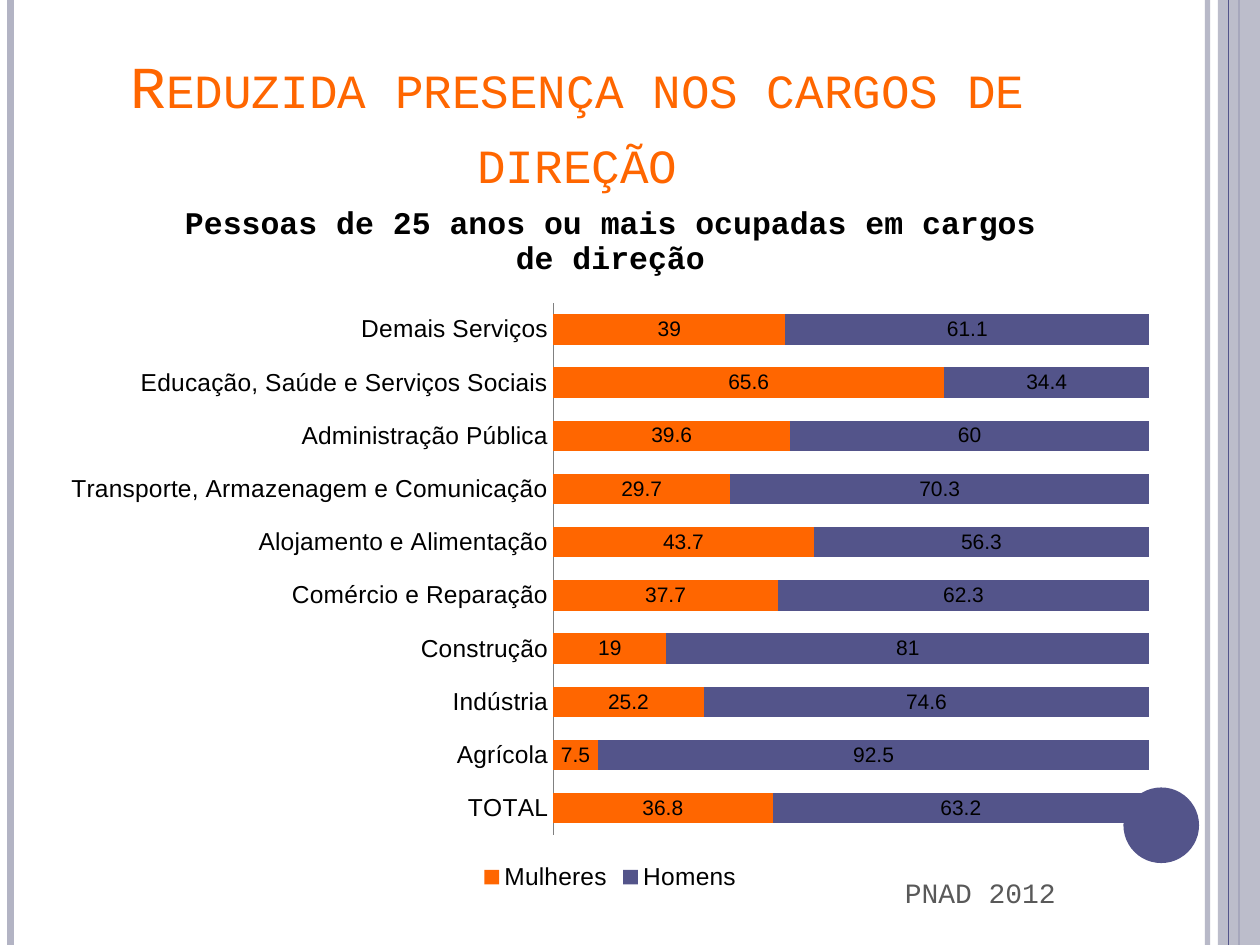
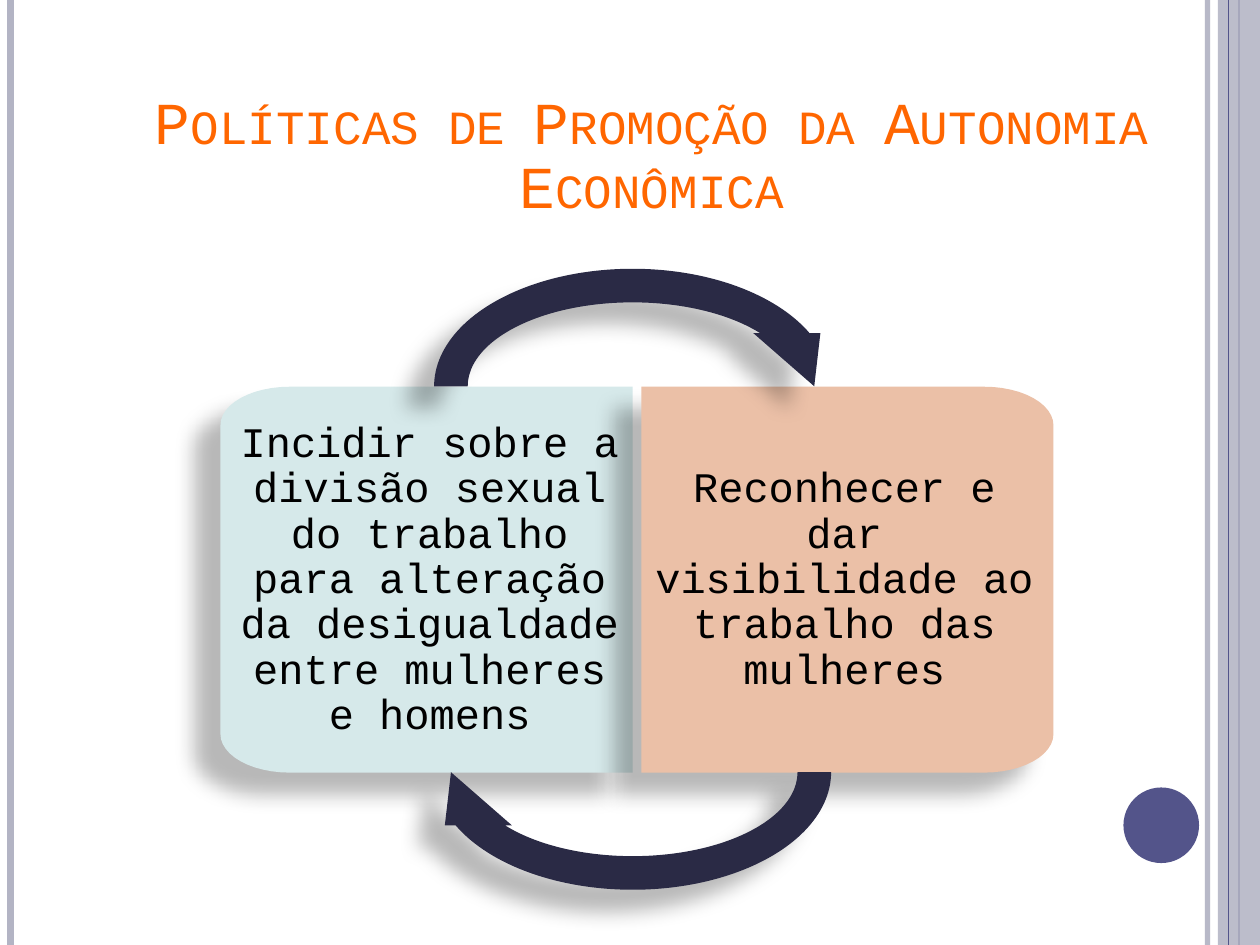
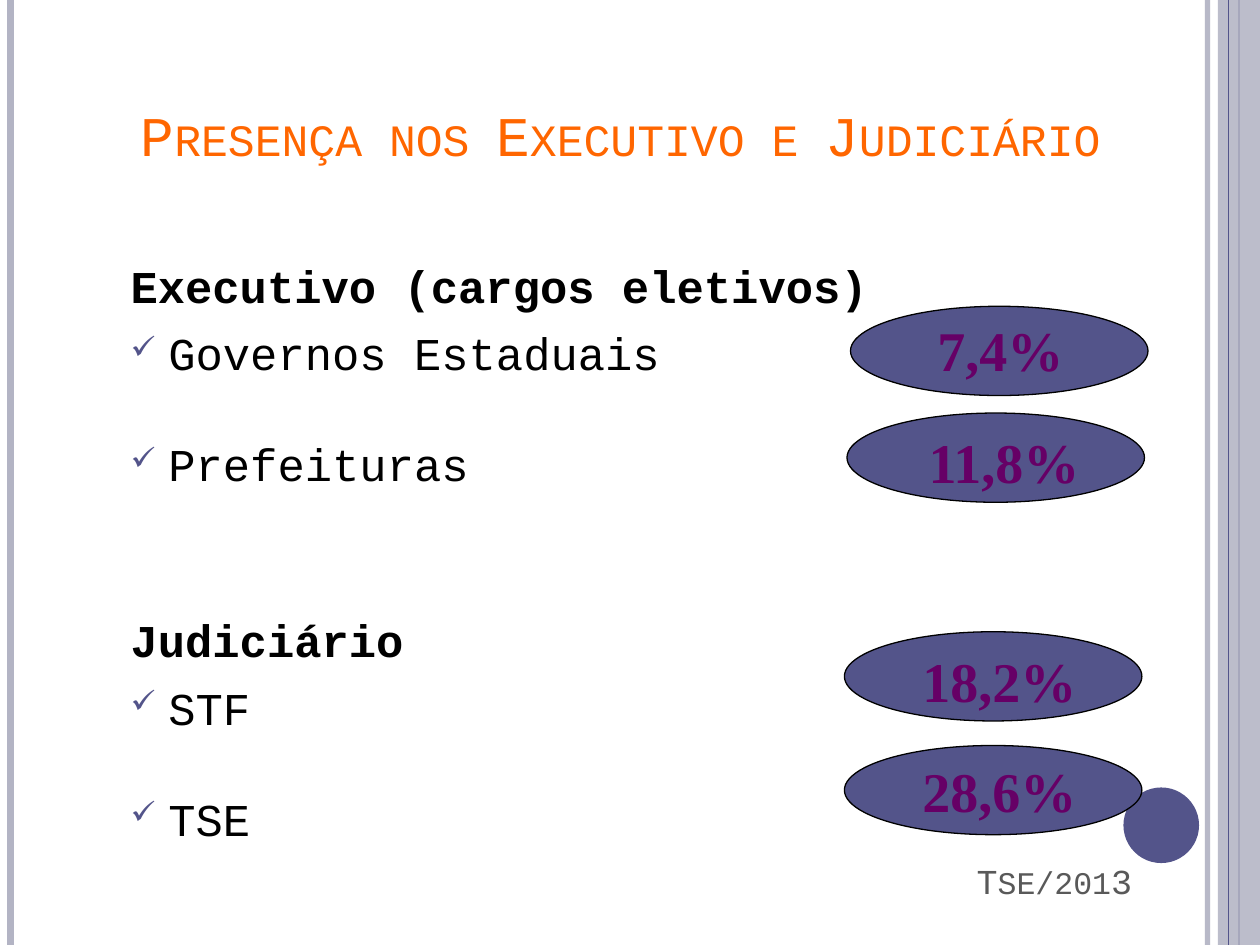
"""Build three slides on women in leadership, with a shared frame."""
from math import cos, pi, sin

from lxml.etree import SubElement
from pptx import Presentation
from pptx.chart.data import CategoryChartData
from pptx.dml.color import RGBColor
from pptx.enum.chart import XL_CHART_TYPE, XL_LEGEND_POSITION, XL_TICK_MARK
from pptx.enum.shapes import MSO_CONNECTOR, MSO_SHAPE
from pptx.enum.text import MSO_ANCHOR, PP_ALIGN
from pptx.oxml.ns import qn
from pptx.util import Pt

HUES = {
    "orange": "FF6600", "indigo": "53548A", "band": "B3B4C4",
    "black": "000000", "grey": "595959", "purple": "660066",
    "mint": "D6E9EA", "peach": "EBC0A7", "navy": "2A2A45", "axis": "808080",
}
MONO, SANS, SERIF = "Courier New", "Arial", "Times New Roman"
WIDE, HIGH = 720, 540

RULES = [(690, "band", 3), (6, "band", 4.5), (708, "indigo", 1.5), (702, "indigo", 0.75)]

SHARES = [
    ("TOTAL", 36.8, 63.2),
    ("Agrícola", 7.5, 92.5),
    ("Indústria", 25.2, 74.6),
    ("Construção", 19, 81),
    ("Comércio e Reparação", 37.7, 62.3),
    ("Alojamento e Alimentação", 43.7, 56.3),
    ("Transporte, Armazenagem e Comunicação", 29.7, 70.3),
    ("Administração Pública", 39.6, 60),
    ("Educação, Saúde e Serviços Sociais", 65.6, 34.4),
    ("Demais Serviços", 39, 61.1),
]
SEXES = [("Mulheres", "orange"), ("Homens", "indigo")]

PANELS = [
    ("Incidir sobre a divisão sexual do trabalho para alteração da "
     "desigualdade entre mulheres e homens", "mint", 126, -1),
    ("Reconhecer e dar visibilidade ao trabalho das mulheres", "peach", 366.5, 1),
]
ARROWS = [(144, 0), (364.5, 180)]
BENDS = [0.125, 11.423, 204.577, 108, 0.125]

POSTS = [
    ("Executivo (cargos eletivos)", True, 6),
    ("Governos Estaduais", False, 6),
    ("Prefeituras", False, 37),
    ("Judiciário", True, 74),
    ("STF", False, 6),
    ("TSE", False, 37),
]
RATES = [
    ("7,4%", 486, 175, 528.5, 177, 87),
    ("11,8%", 484, 236, 523.5, 241, 101.5),
    ("18,2%", 482.5, 361, 520, 366, 105),
    ("28,6%", 482.5, 426, 520, 428.5, 105),
]
CREDIT = [("T", 20), ("SE/201", 18), ("3", 20)]


def rgb(hue):
    return RGBColor.from_string(HUES[hue])


def style(font, face, size, hue="black", bold=False):
    font.name, font.size, font.bold = face, Pt(size), bold
    font.color.rgb = rgb(hue)


def paint(shape, hue, edge=None):
    shape.shadow.inherit = False
    shape.fill.solid()
    shape.fill.fore_color.rgb = rgb(hue)
    if edge:
        shape.line.color.rgb = rgb(edge)
        shape.line.width = Pt(0.75)
    else:
        shape.line.fill.background()


def fade(shape, share):
    tint = next(shape.element.spPr.iter(qn("a:srgbClr")))
    SubElement(tint, qn("a:alpha"), val=str(share * 1000))


def shade(shape):
    glow = SubElement(shape.element.spPr.find(qn("a:effectLst")), qn("a:outerShdw"),
                      blurRad=str(Pt(11.8)), dist=str(Pt(19.7)),
                      dir=str(141 * 60000), algn="ctr", rotWithShape="0")
    tint = SubElement(glow, qn("a:srgbClr"), val=HUES["black"])
    SubElement(tint, qn("a:alpha"), val="28000")


def add(slide, kind, *box):
    return slide.shapes.add_shape(kind, *map(Pt, box))


def write(slide, text, box, face, size, hue, bold=False, wrap=True):
    frame = slide.shapes.add_textbox(*map(Pt, box)).text_frame
    frame.word_wrap = wrap
    para = frame.paragraphs[0]
    para.text = text
    style(para.font, face, size, hue, bold)
    return frame


def title(slide, text, box, size=34, space=1.0, anchor=MSO_ANCHOR.MIDDLE):
    frame = write(slide, text, box, MONO, size, "orange")
    frame.vertical_anchor = anchor
    para = frame.paragraphs[0]
    para.alignment, para.line_spacing = PP_ALIGN.CENTER, space
    para._p.pPr.find(qn("a:defRPr")).set("cap", "small")
    return frame


def dress(layout, slide):
    parts = []
    for left, hue, width in RULES:
        rule = slide.shapes.add_connector(
            MSO_CONNECTOR.STRAIGHT, Pt(left), 0, Pt(left), Pt(HIGH))
        rule.line.color.rgb = rgb(hue)
        rule.line.width = Pt(width)
        SubElement(rule.element.spPr, qn("a:effectLst"))
        parts.append(rule)
    fade(parts[0], 93)
    band = add(slide, MSO_SHAPE.RECTANGLE, 696, 0, 24, HIGH)
    paint(band, "band")
    fade(band, 87)
    parts.insert(3, band)
    dot = add(slide, MSO_SHAPE.OVAL, 642, 450, 43.2, 43.2)
    paint(dot, "indigo")
    for hold in list(layout.placeholders):
        layout.shapes.element.remove(hold.element)
    for part in parts + [dot]:
        layout.shapes.element.append(part.element)


def shares(slide):
    frame = title(slide, "Reduzida presença nos cargos de direção",
                  (36, 21.6, 588, 90), space=1.05, anchor=MSO_ANCHOR.BOTTOM)
    frame.margin_bottom = 0
    data = CategoryChartData()
    data.categories = [row[0] for row in SHARES]
    for col, (name, hue) in enumerate(SEXES, 1):
        data.add_series(name, [row[col] for row in SHARES])
    chart = slide.shapes.add_chart(
        XL_CHART_TYPE.BAR_STACKED_100, Pt(28), Pt(101.5), Pt(641.5), Pt(410.5), data).chart
    style(chart.font, "Cambria", 10)
    chart.has_title = True
    head = chart.chart_title.text_frame.paragraphs[0]
    head.text = "Pessoas de 25 anos ou mais ocupadas em cargos de direção"
    style(head.font, MONO, 18, bold=True)
    chart.chart_title.include_in_layout = False
    chart.has_legend = True
    chart.legend.position = XL_LEGEND_POSITION.BOTTOM
    chart.legend.include_in_layout = False
    style(chart.legend.font, SANS, 14)
    axis = chart.category_axis
    axis.major_tick_mark = axis.minor_tick_mark = XL_TICK_MARK.NONE
    axis.format.line.color.rgb = rgb("axis")
    style(axis.tick_labels.font, SANS, 14)
    chart.value_axis.visible = False
    chart.value_axis.has_major_gridlines = False
    plot = chart.plots[0]
    plot.gap_width, plot.overlap, plot.vary_by_categories = 75, 100, False
    for series, (name, hue) in zip(plot.series, SEXES):
        series.format.fill.solid()
        series.format.fill.fore_color.rgb = rgb(hue)
        series.data_labels.show_value = True
        style(series.data_labels.font, SANS, 12)
    write(slide, "PNAD 2012", (510, 497, 105, 26.5), MONO, 16, "grey", wrap=False)


def panel(slide, text, hue, left, side):
    top, wide, tall, rx, ry, steps = 221, 235.5, 220.5, 39.5, 22, 12
    mid = left + wide / 2
    turns = [pi / 2 * i / steps for i in range(steps + 1)]
    arc = [(wide / 2 - rx + rx * sin(t), ry - ry * cos(t)) for t in turns]
    dots = [(mid + side * x, top + y) for x, y in arc]
    dots += [(mid + side * x, top + tall - y) for x, y in reversed(arc)]
    dots += [(mid - side * wide / 2, top + y) for y in (tall, 0)]
    dots = [(Pt(x), Pt(y)) for x, y in dots]
    path = slide.shapes.build_freeform(*dots[0], scale=1.0)
    path.add_line_segments(dots[1:], close=True)
    shape = path.convert_to_shape()
    paint(shape, hue)
    shade(shape)
    frame = shape.text_frame
    frame.word_wrap, frame.vertical_anchor = True, MSO_ANCHOR.MIDDLE
    frame.margin_left, frame.margin_right = [Pt(m) for m in (10, 6.5)[::-side]]
    frame.margin_top = frame.margin_bottom = Pt(13.5)
    para = frame.paragraphs[0]
    para.text = text
    para.alignment, para.line_spacing = PP_ALIGN.CENTER, 0.9
    style(para.font, MONO, 24)


def cycle(slide):
    for item in PANELS:
        panel(slide, *item)
    for top, turn in ARROWS:
        arrow = add(slide, MSO_SHAPE.CIRCULAR_ARROW, 238.5, top, 246, 153.5)
        arrow.rotation = turn
        for i, bend in enumerate(BENDS):
            arrow.adjustments[i] = bend
        paint(arrow, "navy")
        shade(arrow)
    title(slide, "Políticas de Promoção da Autonomia Econômica",
          (70, 36, 605, 108), space=0.9)


def tick(para):
    last = para._p.pPr.find(qn("a:defRPr"))
    color = SubElement(para._p.pPr, qn("a:buClr"))
    SubElement(color, qn("a:srgbClr"), val=HUES["indigo"])
    size = SubElement(para._p.pPr, qn("a:buSzPct"), val="70000")
    mark = SubElement(para._p.pPr, qn("a:buChar"), char="✓")
    for part in (color, size, mark):
        last.addprevious(part)


def posts(slide):
    frame = slide.shapes.add_textbox(Pt(67.5), Pt(148.5), Pt(436.5), Pt(356.5)).text_frame
    frame.word_wrap = True
    for i, (text, head, gap) in enumerate(POSTS):
        para = frame.add_paragraph() if i else frame.paragraphs[0]
        para.text = text
        style(para.font, MONO, 26, bold=head)
        para.line_spacing = 0.85
        para.space_before, para.space_after = Pt(gap), Pt(6 if head else 0)
        para._p.pPr.set("marL", str(Pt(21.6)))
        para._p.pPr.set("indent", str(-Pt(21.6)))
        if not head:
            tick(para)
    title(slide, "Presença nos Executivo e Judiciário ", (25, 31.5, 674.5, 90), 32)
    for text, left, top, x, y, wide in RATES:
        paint(add(slide, MSO_SHAPE.OVAL, left, top, 170, 51), "indigo", "black")
        write(slide, text, (x, y, wide, 45.5), SERIF, 32, "purple", True, False)
    frame = write(slide, "", (402, 487.5, 252, 31.5), MONO, 20, "grey")
    para = frame.paragraphs[0]
    para.alignment = PP_ALIGN.RIGHT
    for text, size in CREDIT:
        run = para.add_run()
        run.text = text
        run.font.size = Pt(size)


def main():
    deck = Presentation()
    deck.slide_width, deck.slide_height = Pt(WIDE), Pt(HIGH)
    blank = deck.slide_layouts[6]
    for i, fill in enumerate((shares, cycle, posts)):
        slide = deck.slides.add_slide(blank)
        if i == 0:
            dress(blank, slide)
        fill(slide)
    deck.save("out.pptx")


if __name__ == "__main__":
    main()
